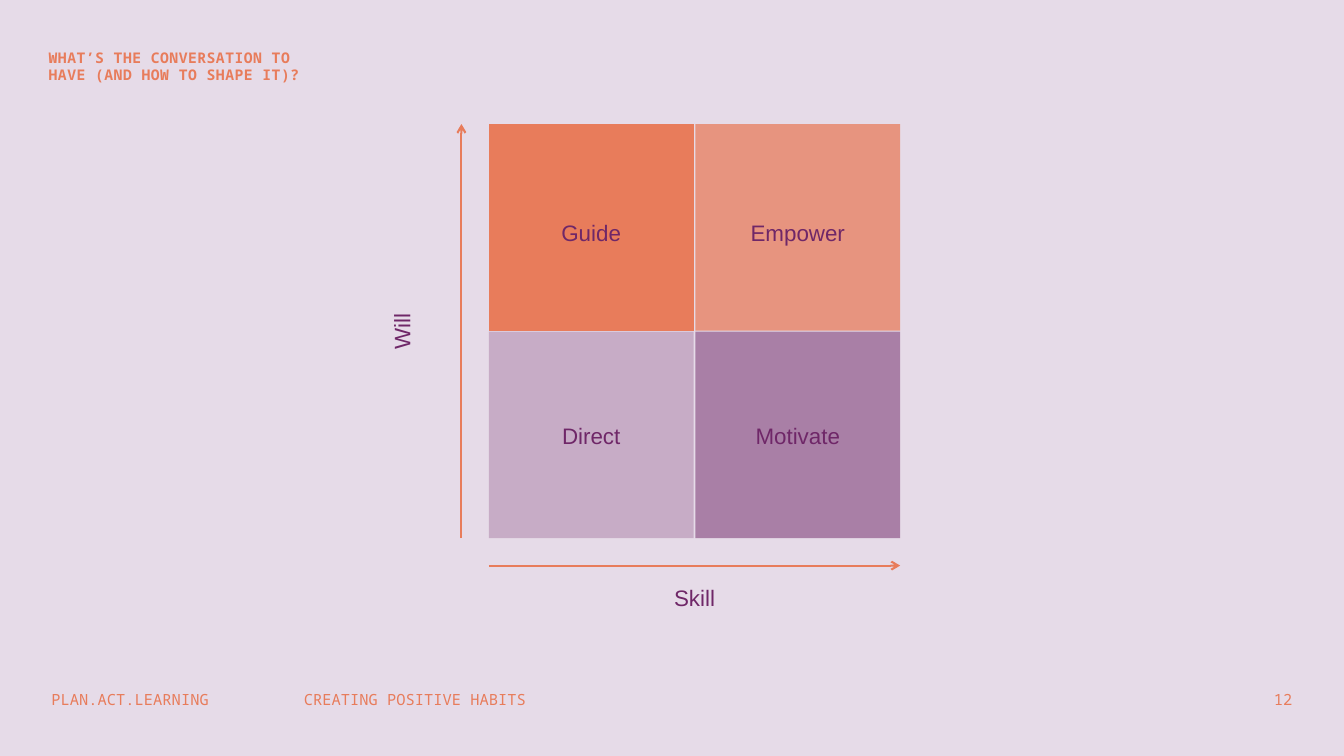
from dataclasses import dataclass

from lxml.etree import SubElement
from pptx import Presentation
from pptx.dml.color import RGBColor as Rgb
from pptx.enum.shapes import MSO_CONNECTOR as Conn, MSO_SHAPE as Kind
from pptx.enum.text import MSO_ANCHOR as Anchor, PP_ALIGN as Align
from pptx.oxml.ns import qn
from pptx.util import Pt

CORAL, PLUM, LILAC = "E87C5B", "6F2768", "E6DBE8"
SANS = {"name": "Arial", "size": Pt(16), "bold": False}
MONO = {"name": "Noto Sans Mono", "size": Pt(11), "bold": False}
HEAD = MONO | {"size": Pt(10.5), "bold": True}

# Matrix grid, in points
LEFT, TOP = 349.2, 88.6
WIDE, HIGH = 146.2, 147.6
STEP_X, STEP_Y = 147.6, 148.2
RIGHT = LEFT + STEP_X + WIDE
BASE = TOP + STEP_Y + HIGH
AXIS_GAP = 19.6
FOOT = 493


@dataclass
class Label:
    text: str
    x: float
    y: float
    w: float
    h: float
    font: dict
    tone: str
    align: Align = Align.LEFT
    turn: float = 0
    track: int = 0  # letter spacing, hundredths of a point


@dataclass
class Quad:
    text: str
    col: int
    row: int
    tone: str
    alpha: int  # percent
    drop: float  # label offset from the top of the cell


@dataclass
class Axis:
    x1: float
    y1: float
    x2: float
    y2: float


LABELS = [
    Label("PLAN.ACT.LEARNING", 36.7, FOOT, 152.6, 13.7, MONO, CORAL),
    Label("CREATING POSITIVE HABITS", 217, FOOT, 241.2, 13.7, MONO, CORAL),
    Label("12", 770.6, FOOT, 152.6, 13.7, MONO, CORAL, Align.RIGHT),
    Label("WHAT’S THE CONVERSATION TO HAVE (AND HOW TO SHAPE IT)?",
          34.8, 34.6, 181.8, 33.8, HEAD, CORAL, track=40),
    Label("Will", 206.2, 221.8, 171.4, 29.5, SANS, PLUM, Align.CENTER, turn=270),
    Label("Skill", LEFT, 416.9, RIGHT - LEFT, 29.5, SANS, PLUM, Align.CENTER),
]
QUADS = [
    Quad("Guide", 0, 0, CORAL, 100, 68),
    Quad("Empower", 1, 0, CORAL, 74, 68),
    Quad("Direct", 0, 1, PLUM, 26, 65),
    Quad("Motivate", 1, 1, PLUM, 51, 65),
]
AXES = [
    Axis(LEFT - AXIS_GAP, BASE, LEFT - AXIS_GAP, TOP),
    Axis(LEFT, BASE + AXIS_GAP, RIGHT, BASE + AXIS_GAP),
]


def paint(fill, tone: str, alpha: int = 100) -> None:
    fill.solid()
    fill.fore_color.rgb = Rgb.from_string(tone)
    if alpha < 100:
        clr = fill.fore_color._xFill.find(qn("a:srgbClr"))
        SubElement(clr, qn("a:alpha"), val=str(alpha * 1000))


def write(slide, label: Label) -> None:
    box = slide.shapes.add_textbox(*map(Pt, (label.x, label.y, label.w, label.h)))
    box.rotation = label.turn
    frame = box.text_frame
    frame.word_wrap = True
    frame.vertical_anchor = Anchor.TOP
    for side in ("left", "top", "right", "bottom"):
        setattr(frame, f"margin_{side}", 0)
    para = frame.paragraphs[0]
    para.alignment = label.align
    run = para.add_run()
    run.text = label.text
    for key, value in label.font.items():
        setattr(run.font, key, value)
    paint(run.font.fill, label.tone)
    if label.track:
        run.font._element.set("spc", str(label.track))


def draw_quad(slide, quad: Quad) -> None:
    x, y = LEFT + quad.col * STEP_X, TOP + quad.row * STEP_Y
    cell = slide.shapes.add_shape(Kind.FLOWCHART_PROCESS, *map(Pt, (x, y, WIDE, HIGH)))
    cell.shadow.inherit = False
    cell.line.fill.background()
    paint(cell.fill, quad.tone, quad.alpha)
    write(slide, Label(quad.text, x, y + quad.drop, WIDE, 29.5, SANS, PLUM, Align.CENTER))


def draw_axis(slide, axis: Axis) -> None:
    ends = map(Pt, (axis.x1, axis.y1, axis.x2, axis.y2))
    line = slide.shapes.add_connector(Conn.STRAIGHT, *ends)
    line.line.width = Pt(1.5)
    paint(line.line.fill, CORAL)
    SubElement(line.line._get_or_add_ln(), qn("a:tailEnd"), type="arrow")
    SubElement(line._element.spPr, qn("a:effectLst"))


def main() -> None:
    deck = Presentation()
    deck.slide_width, deck.slide_height = Pt(960), Pt(540)
    slide = deck.slides.add_slide(deck.slide_layouts[6])
    paint(slide.background.fill, LILAC)
    for quad in QUADS:
        draw_quad(slide, quad)
    for axis in AXES:
        draw_axis(slide, axis)
    for label in LABELS:
        write(slide, label)
    deck.save("out.pptx")


if __name__ == "__main__":
    main()
